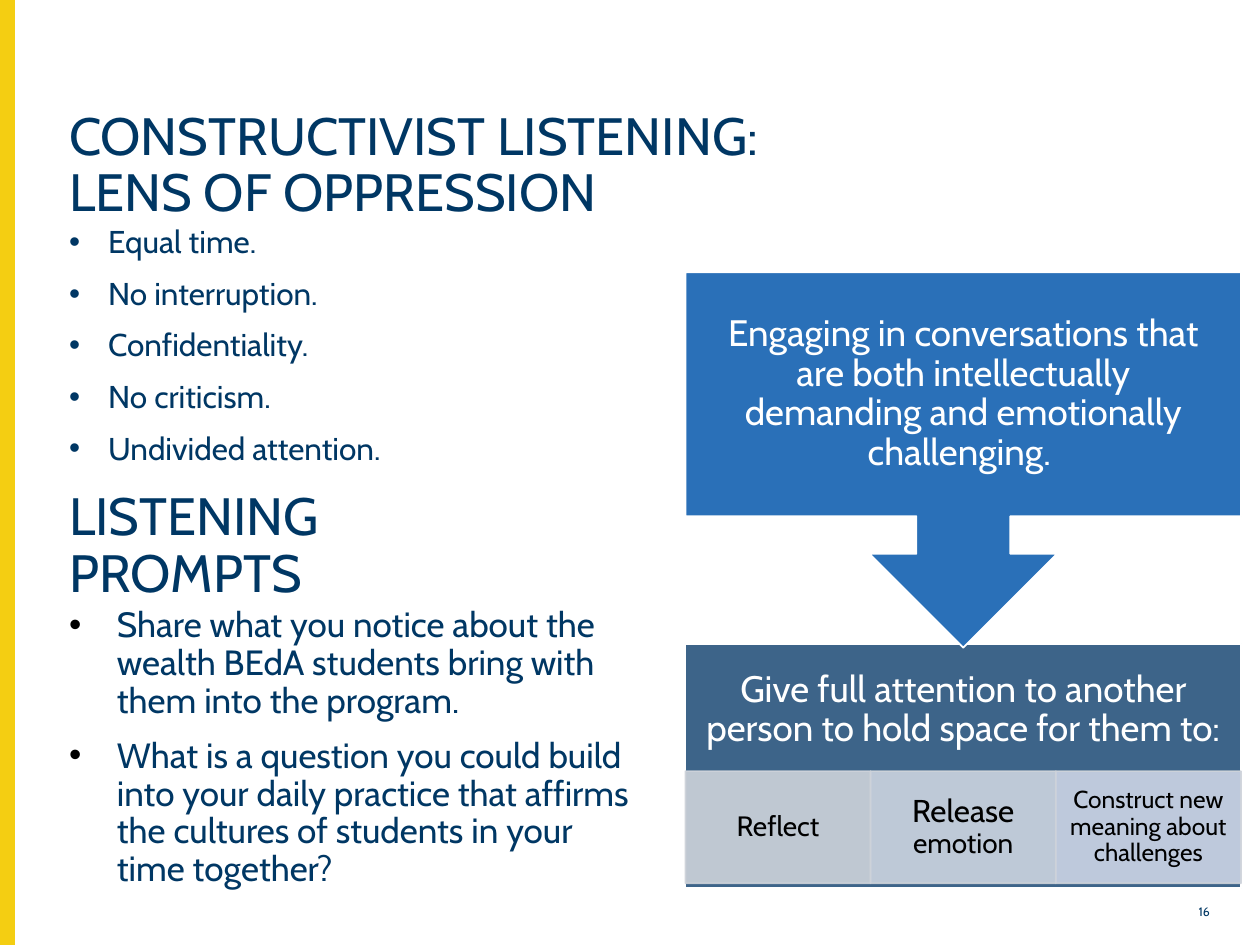
from lxml.etree import SubElement
from pptx import Presentation
from pptx.dml.color import RGBColor
from pptx.enum.shapes import MSO_SHAPE as Shape
from pptx.enum.text import MSO_ANCHOR as Anchor, PP_ALIGN as Align
from pptx.oxml.ns import qn
from pptx.util import Inches, Pt

FONT = "Cabin"
NAVY = RGBColor(0x00, 0x37, 0x64)
YELLOW = RGBColor(0xF4, 0xCE, 0x12)
BLUE = RGBColor(0x2A, 0x70, 0xB8)
SLATE = RGBColor(0x3D, 0x64, 0x89)
TILE_LINE = RGBColor(0xCE, 0xD3, 0xDA)
WHITE = RGBColor(0xFF, 0xFF, 0xFF)
BLACK = RGBColor(0x00, 0x00, 0x00)

# Content: a paragraph is a list of (text, size) spans
TITLE = "CONSTRUCTIVIST LISTENING: \vLENS OF OPPRESSION"
RULES = ["Equal time.", "No interruption.", "Confidentiality.",
         "No criticism.", "Undivided attention."]
PROMPT_TITLE = "LISTENING PROMPTS"
PROMPTS = [
    "Share what you notice about the wealth BEdA students bring with them "
    "into the program.",
    "What is a question you could build into your daily practice that affirms "
    "the cultures of students in your time together?",
]
CALLOUT = ("Engaging in conversations that are both intellectually demanding "
           "and emotionally challenging.")
PURPOSE = "Give full attention to another person to hold space for them to:"
TILES = [  # spans, fill, side inset
    ([("Reflect", 16)], TILE_LINE, 0.12),
    ([("Release", 18), (" emotion", 16)], RGBColor(0xCD, 0xD4, 0xE0), 0.14),
    ([("Construct new meaning about challenges", 14)],
     RGBColor(0xCD, 0xD5, 0xE6), 0.11),
]
PAGE_NUMBER = "16"

# Layout
WIDTH, HEIGHT = 10, 7.5
LEFT = 0.45
FLOW_LEFT, FLOW_WIDTH = 5.44, 4.41
CALLOUT_TOP, CALLOUT_HEIGHT = 2.16, 2.98
BLOCK_TOP, BLOCK_HEIGHT = 5.11, 1.94
TILE_TOP, TILE_HEIGHT = 6.12, 0.89
TILE_WIDTH = FLOW_WIDTH / len(TILES)

deck = Presentation()
deck.slide_width, deck.slide_height = Inches(WIDTH), Inches(HEIGHT)
page = deck.slides.add_slide(deck.slide_layouts[6])


def add_shape(kind, area, fill, line, opacity=None):
    shape = page.shapes.add_shape(kind, *map(Inches, area))
    shape.shadow.inherit = False
    shape.fill.solid()
    shape.fill.fore_color.rgb = fill
    shape.line.color.rgb = line
    shape.line.width = Pt(1)
    if opacity:
        for color in shape._element.spPr.iter(qn("a:srgbClr")):
            SubElement(color, qn("a:alpha"), val=str(opacity * 1000))
    return shape


def add_box(area):
    return page.shapes.add_textbox(*map(Inches, area))


def write(box, paragraphs, color, anchor=Anchor.TOP, align=Align.LEFT,
          insets=(0.1, 0.05), indent=None, bullet_color=None):
    frame = box.text_frame
    frame.word_wrap = True
    frame.vertical_anchor = anchor
    frame.margin_left = frame.margin_right = Inches(insets[0])
    frame.margin_top = frame.margin_bottom = Inches(insets[1])
    for index, spans in enumerate(paragraphs):
        para = frame.add_paragraph() if index else frame.paragraphs[0]
        para.alignment = align
        para.line_spacing = 0.9
        if index:
            para.space_before = Pt(10)
        if indent:
            props = para._p.get_or_add_pPr()
            props.set("marL", str(Inches(indent)))
            props.set("indent", str(-Inches(indent)))
            if bullet_color:
                holder = SubElement(props, qn("a:buClr"))
                SubElement(holder, qn("a:srgbClr"), val=str(bullet_color))
            SubElement(props, qn("a:buFont"), typeface="Arial")
            SubElement(props, qn("a:buChar"), char="•")
        para.font.name = FONT
        para.font.color.rgb = color
        para.font.size = Pt(spans[0][1])
        if len(spans) == 1:
            para.text = spans[0][0]
            continue
        for text, size in spans:
            span = para.add_run()
            span.text = text
            span.font.size = Pt(size)


# Side bar and heading
add_shape(Shape.RECTANGLE, (0, 0, 0.11, HEIGHT), YELLOW, YELLOW)
write(add_box((LEFT, 0.28, 6.67, 1.54)), [[(TITLE, 30)]], NAVY, Anchor.BOTTOM)

# Listening rules
write(add_box((LEFT, 1.75, 3.79, 2.6)), [[(rule, 18)] for rule in RULES],
      NAVY, indent=0.31)

# Page number
write(add_box((9.2, 7.14, 0.5, 0.21)), [[(PAGE_NUMBER, 7)]], NAVY,
      align=Align.RIGHT)

# Lower block with its row of tiles
add_shape(Shape.RECTANGLE, (FLOW_LEFT, BLOCK_TOP, FLOW_WIDTH, BLOCK_HEIGHT),
          SLATE, WHITE)
write(add_box((FLOW_LEFT, BLOCK_TOP, FLOW_WIDTH, 1.05)), [[(PURPOSE, 21)]],
      WHITE, Anchor.MIDDLE, Align.CENTER, (0.16, 0.16))
for column, (spans, fill, inset) in enumerate(TILES):
    area = (FLOW_LEFT + column * TILE_WIDTH, TILE_TOP, TILE_WIDTH, TILE_HEIGHT)
    tile = add_shape(Shape.RECTANGLE, area, fill, TILE_LINE, opacity=90)
    write(tile, [spans], BLACK, Anchor.MIDDLE, Align.CENTER, (inset, 0.02))

# Callout pointing down to the block
callout = add_shape(Shape.UP_ARROW_CALLOUT,
                    (FLOW_LEFT, CALLOUT_TOP, FLOW_WIDTH, CALLOUT_HEIGHT),
                    BLUE, WHITE)
callout.rotation = 180
write(add_box((FLOW_LEFT, CALLOUT_TOP, FLOW_WIDTH, 0.65 * CALLOUT_HEIGHT)),
      [[(CALLOUT + " ", 21)]], WHITE, Anchor.MIDDLE, Align.CENTER, (0.16, 0.16))

# Listening prompts
write(add_box((LEFT, 3.78, 3.46, 1.06)), [[(PROMPT_TITLE, 30)]], NAVY,
      Anchor.BOTTOM)
write(add_box((LEFT, 4.77, 4.66, 2.5)), [[(prompt, 20)] for prompt in PROMPTS],
      NAVY, indent=0.38, bullet_color=BLACK)

deck.save("out.pptx")
